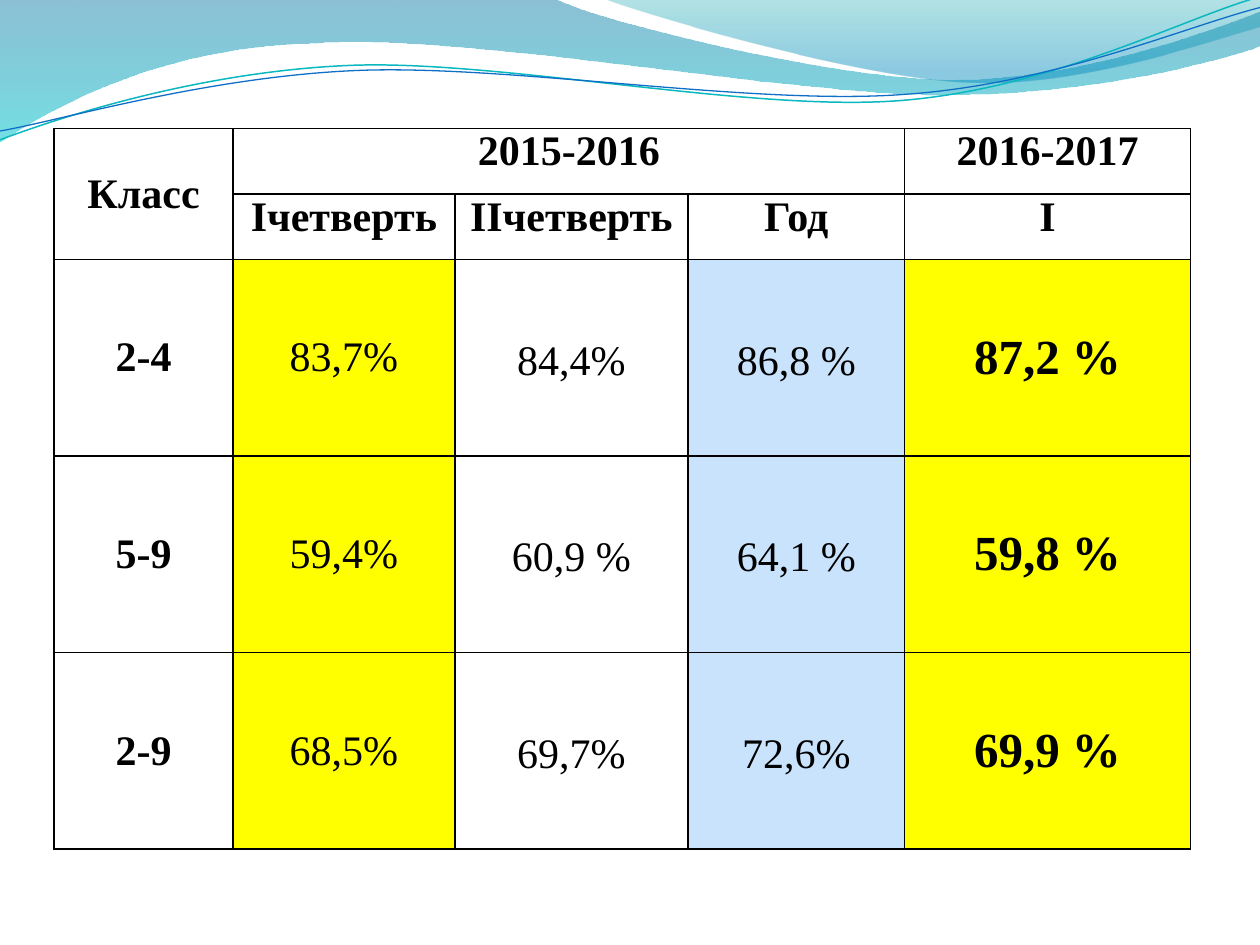
from lxml import etree
from pptx import Presentation
from pptx.dml.color import RGBColor
from pptx.enum import text
from pptx.oxml import parse_xml
from pptx.oxml.ns import nsdecls, qn
from pptx.util import Inches, Pt

FONT = "Times New Roman"
YELLOW, BLUE = "FFFF00", "C8E3FB"
COLS = [1.42, 1.76, 1.85, 1.72, 2.27]
ROWS = [0.52, 0.52, 1.56, 1.56, 1.56]
FILLS = [None, YELLOW, None, BLUE, YELLOW]
HEADS = [
    ["Класс", "2015-2016", "", "", "2016-2017"],
    ["", "Iчетверть", "IIчетверть", "Год", "I"],
]
RATES = [
    ["2-4", "83,7%", "84,4%", "86,8 %", "87,2 %"],
    ["5-9", "59,4%", "60,9 %", "64,1 %", "59,8 %"],
    ["2-9", "68,5%", "69,7%", "72,6%", "69,9 %"],
]

# A pair is a straight step; six numbers are a Bezier step.
# Gradient stops: position, colour, opacity (percent).
BANDS = [
    ([(0, 0), (4.4, -0.01), (4.76, 0.17, 6.64, 0.63, 7.58, 0.63),
      (8.53, 0.63, 9.58, 0.26, 10, 0.09), (10.01, 0.36),
      (9.83, 0.44, 8.7, 0.76, 7.46, 0.75), (6.22, 0.75, 3.82, 0.28, 2.57, 0.34),
      (1.29, 0.36, 0.46, 0.83, -0.01, 1.13)],
     [(0, "0074A1", 45), (100, "00C6CF", 55)]),
    ([(4.79, -0.01), (5.09, 0.11, 6.82, 0.62, 7.69, 0.65),
      (8.56, 0.69, 9.61, 0.32, 10, 0.21), (10, 0)],
     [(0, "00A1A9", 30), (80, "008BBF", 45)]),
]
WAVES = [
    ([(0, 1.11), (0.48, 0.93, 1.58, 0.57, 2.77, 0.52),
      (3.95, 0.47, 5.93, 0.89, 7.13, 0.8), (8.33, 0.71, 9.38, 0.15, 9.98, -0.02)],
     "0AB8BF", 0.85),
    ([(0, 1.04), (0.47, 0.96, 1.64, 0.61, 2.83, 0.56),
      (4.03, 0.51, 5.97, 0.84, 7.17, 0.75), (8.36, 0.67, 9.41, 0.21, 10, 0.06)],
     "0F6FC6", 0.75),
]


def rgb(code):
    return RGBColor.from_string(code)


def draw(slide, steps, close):
    """Build an outline, then join each three points of a Bezier step to a curve."""
    points = [(Inches(step[i]), Inches(step[i + 1]))
              for step in steps for i in range(0, len(step), 2)]
    pen = slide.shapes.build_freeform(*points[0])
    pen.add_line_segments(points[1:], close=close)
    shape = pen.convert_to_shape()
    shape.shadow.inherit = False
    legs = iter(list(shape._element.iter(qn("a:lnTo"))))
    for step in steps[1:]:
        leg = next(legs)
        if len(step) == 6:
            leg.addprevious(curve := etree.Element(qn("a:cubicBezTo")))
            for part in (leg, next(legs), next(legs)):
                curve.append(part[0])
                part.getparent().remove(part)
    return shape


def shade(shape, stops):
    """Fill from top to bottom with partly clear colours."""
    marks = "".join(
        f'<a:gs pos="{pos * 1000}"><a:srgbClr val="{code}">'
        f'<a:alpha val="{alpha * 1000}"/></a:srgbClr></a:gs>'
        for pos, code, alpha in stops)
    grad = parse_xml(f'<a:gradFill {nsdecls("a")}><a:gsLst>{marks}</a:gsLst>'
                     '<a:lin ang="5400000" scaled="0"/></a:gradFill>')
    shape.fill.background()
    none = shape._element.spPr.find(qn("a:noFill"))
    none.getparent().replace(none, grad)


def border(cell):
    props = cell._tc.get_or_add_tcPr()
    for i, side in enumerate(("lnL", "lnR", "lnT", "lnB")):
        line = etree.Element(qn(f"a:{side}"), w=str(Pt(1)))
        fill = etree.SubElement(line, qn("a:solidFill"))
        etree.SubElement(fill, qn("a:srgbClr"), val="000000")
        props.insert(i, line)


def write(cell, words, size, bold, middle, space):
    cell.margin_left = cell.margin_right = Inches(0.07)
    cell.margin_top = cell.margin_bottom = 0
    anchor = text.MSO_ANCHOR
    cell.vertical_anchor = anchor.MIDDLE if middle else anchor.TOP
    if words:
        para = cell.text_frame.paragraphs[0]
        para.alignment = text.PP_ALIGN.CENTER
        para.line_spacing = space
        run = para.add_run()
        run.text = words
        font = run.font
        font.name, font.size, font.bold = FONT, Pt(size), bold
        font.color.rgb = rgb("000000")


def fill_table(slide):
    grid = slide.shapes.add_table(
        len(ROWS), len(COLS), Inches(0.43), Inches(1.02),
        Inches(sum(COLS)), Inches(sum(ROWS))).table
    grid.first_row = grid.horz_banding = False
    for col, width in zip(grid.columns, COLS):
        col.width = Inches(width)
    for row, height in zip(grid.rows, ROWS):
        row.height = Inches(height)
    for r, line in enumerate(HEADS + RATES):
        head = r < len(HEADS)
        for c, words in enumerate(line):
            cell = grid.cell(r, c)
            last = c == len(COLS) - 1
            write(cell, words,
                  size=28 if last and not head else 24,
                  bold=head or last or c == 0,
                  middle=not head or c == 0,
                  space=1.15 if not head and c in (2, 3) else 1.0)
            if FILLS[c] and not head:
                cell.fill.solid()
                cell.fill.fore_color.rgb = rgb(FILLS[c])
            else:
                cell.fill.background()
            border(cell)
    grid.cell(0, 0).merge(grid.cell(1, 0))
    grid.cell(0, 1).merge(grid.cell(0, 3))


def main():
    deck = Presentation()
    deck.slide_width, deck.slide_height = Inches(10), Inches(7.5)
    slide = deck.slides.add_slide(deck.slide_layouts[6])
    for steps, stops in BANDS:
        band = draw(slide, steps, close=True)
        shade(band, stops)
        band.line.fill.background()
    for steps, code, width in WAVES:
        wave = draw(slide, steps, close=False)
        wave.fill.background()
        wave.line.color.rgb = rgb(code)
        wave.line.width = Pt(width)
    fill_table(slide)
    deck.save("out.pptx")


if __name__ == "__main__":
    main()
